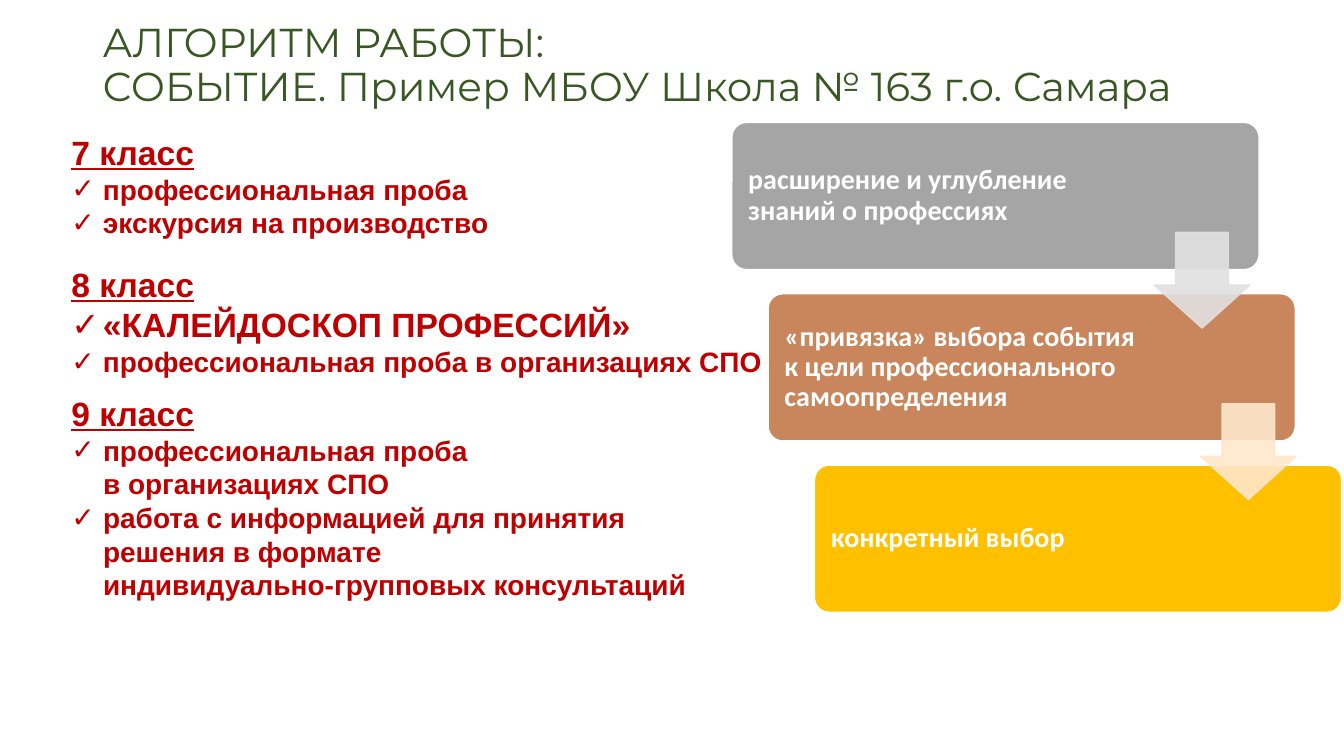
from lxml.etree import SubElement
from pptx import Presentation
from pptx.dml.color import RGBColor
from pptx.enum.shapes import MSO_SHAPE
from pptx.enum.text import MSO_ANCHOR, PP_ALIGN
from pptx.oxml.ns import qn
from pptx.util import Inches, Pt

COLORS = {
    "title": "385723", "list": "C00000", "white": "FFFFFF",
    "gray": "A5A5A5", "copper": "C9855C", "gold": "FFC000",
    "gray arrow": "E1E1E1", "gold arrow": "FFE7CB",
}


class SlideBuilder:
    """Draws styled elements on a slide divided into 40 columns and 30 rows."""

    def __init__(self, presentation):
        self.slide = presentation.slides.add_slide(presentation.slide_layouts[6])
        self.column = presentation.slide_width / 40
        self.row = presentation.slide_height / 30

    def place(self, left, top, width, height):
        return (round(left * self.column), round(top * self.row),
                round(width * self.column), round(height * self.row))

    def add_text(self, paragraph, text, size, font, color, bold=False, underline=False):
        for number, line in enumerate(text.split("\n")):
            if number:
                paragraph.add_line_break()
            run = paragraph.add_run()
            run.text = line
            run.font.size = Pt(size)
            run.font.name = font
            run.font.bold = bold
            run.font.underline = underline
            run.font.color.rgb = RGBColor.from_string(COLORS[color])

    def bullet(self, paragraph):
        properties = paragraph._p.get_or_add_pPr()
        indent = round(0.94 * self.column)
        properties.set("marL", str(indent))
        properties.set("indent", str(-indent))
        SubElement(properties, qn("a:buFont")).set("typeface", "Arial")
        SubElement(properties, qn("a:buChar")).set("char", "✓")

    def text_frame(self, *area):
        frame = self.slide.shapes.add_textbox(*self.place(*area)).text_frame
        frame.word_wrap = True
        return frame

    def title(self, text, *area):
        frame = self.text_frame(*area)
        frame.vertical_anchor = MSO_ANCHOR.MIDDLE
        frame.paragraphs[0].line_spacing = 0.9
        self.add_text(frame.paragraphs[0], text, 28.8, "Montserrat", "title")

    def class_list(self, heading, items, *area):
        frame = self.text_frame(*area)
        self.add_text(frame.paragraphs[0], heading, 24, "Arial", "list", True, True)
        for text, size in items:
            paragraph = frame.add_paragraph()
            self.bullet(paragraph)
            self.add_text(paragraph, text, size, "Arial", "list", True)

    def shape(self, kind, adjustments, fill, line, *area):
        shape = self.slide.shapes.add_shape(kind, *self.place(*area))
        for number, value in enumerate(adjustments):
            shape.adjustments[number] = value
        shape.shadow.inherit = False
        shape.fill.solid()
        shape.fill.fore_color.rgb = RGBColor.from_string(COLORS[fill])
        shape.line.color.rgb = RGBColor.from_string(COLORS[line])
        shape.line.width = Pt(1)
        return shape

    def step(self, text, color, *area):
        frame = self.shape(MSO_SHAPE.ROUNDED_RECTANGLE, [0.1], color, "white", *area).text_frame
        frame.word_wrap = True
        frame.vertical_anchor = MSO_ANCHOR.MIDDLE
        frame.margin_left = round(0.36 * self.column)
        frame.margin_right = round(4.56 * self.column)
        paragraph = frame.paragraphs[0]
        paragraph.alignment = PP_ALIGN.LEFT
        paragraph.line_spacing = 0.9
        self.add_text(paragraph, text, 20, "Calibri", "white", True)

    def arrow(self, color, *area):
        shape = self.shape(MSO_SHAPE.DOWN_ARROW, [0.55, 0.45], color, color, *area)
        for shade in shape._element.spPr.iter(qn("a:srgbClr")):
            SubElement(shade, qn("a:alpha")).set("val", "90000")


def main():
    presentation = Presentation()
    presentation.slide_width = Inches(13.33)
    presentation.slide_height = Inches(7.5)
    builder = SlideBuilder(presentation)

    builder.title("АЛГОРИТМ РАБОТЫ:\nСОБЫТИЕ. Пример МБОУ Школа № 163 г.о. Самара",
                  2.76, 1.16, 36.36, 2.96)

    classes = [
        ("7 класс", 5.04, 18.48, 4.72,
         [("профессиональная проба", 20), ("экскурсия на производство", 20)]),
        ("8 класс", 10.28, 28.89, 5,
         [("«КАЛЕЙДОСКОП ПРОФЕССИЙ»", 24),
          ("профессиональная проба в организациях СПО", 20)]),
        ("9 класс", 15.4, 28.05, 8.76,
         [("профессиональная проба\nв организациях СПО", 20),
          ("работа с информацией для принятия\nрешения в формате\n"
           "индивидуально-групповых консультаций", 20)]),
    ]
    for heading, top, width, height, items in classes:
        builder.class_list(heading, items, 1.83, top, width, height)

    steps = [
        ("расширение и углубление знаний о профессиях", "gray", 21.78),
        ("«привязка» выбора события к цели профессионального самоопределения",
         "copper", 22.86),
        ("конкретный выбор", "gold", 24.24),
    ]
    first_top, pitch = 4.86, 6.8
    for number, (text, color, left) in enumerate(steps):
        builder.step(text, color, left, first_top + number * pitch, 15.69, 5.84)

    for number, color in enumerate(["gray arrow", "gold arrow"], start=1):
        left = steps[number][2] + 11.49
        builder.arrow(color, left, first_top + number * pitch - 2.44, 2.85, 3.8)

    presentation.save("out.pptx")


if __name__ == "__main__":
    main()
